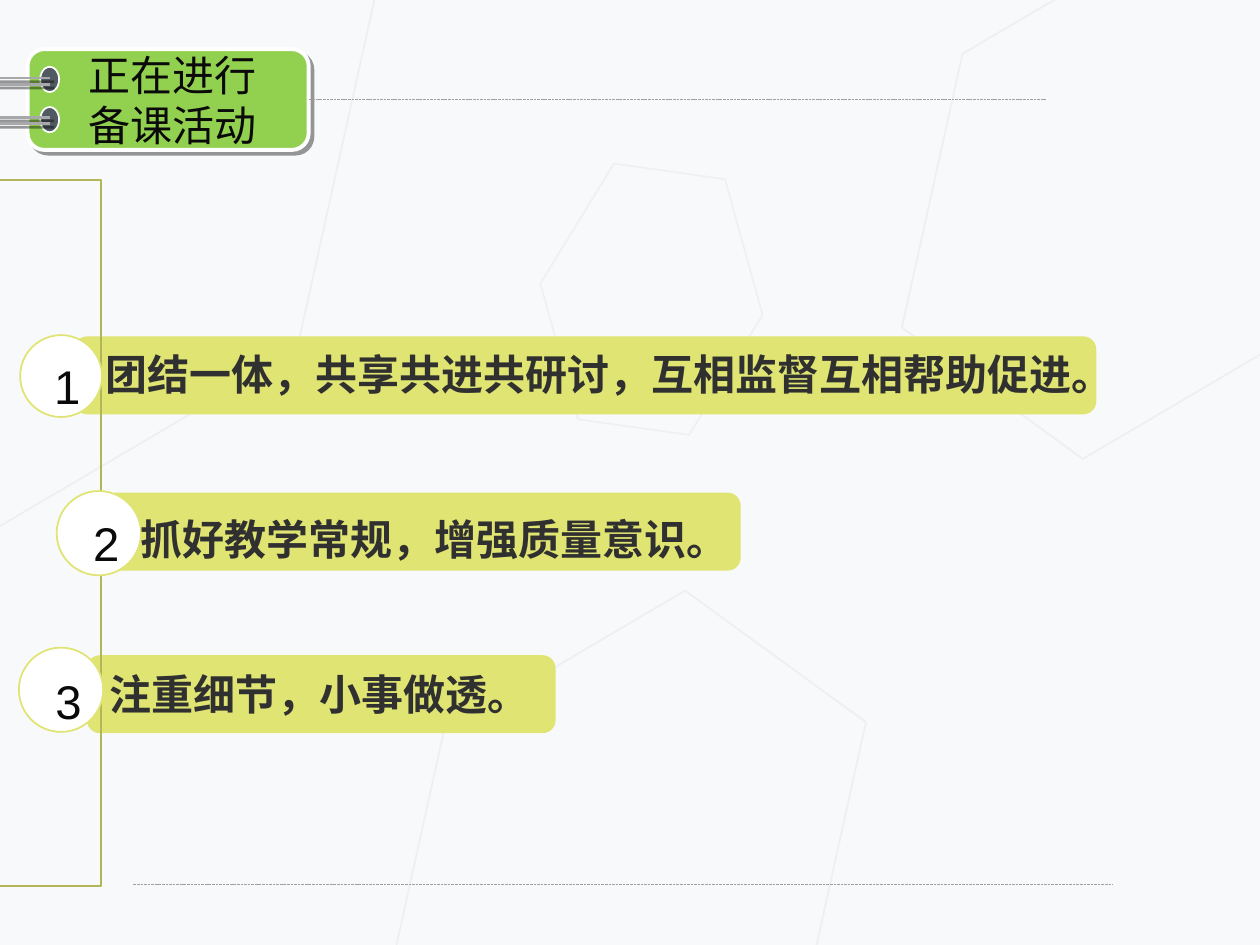
from dataclasses import dataclass
from typing import Optional

from lxml.etree import SubElement
from pptx import Presentation
from pptx.dml.color import RGBColor
from pptx.enum.dml import MSO_LINE
from pptx.enum.shapes import MSO_CONNECTOR, MSO_SHAPE as SHAPE
from pptx.enum.text import MSO_ANCHOR, MSO_AUTO_SIZE, PP_ALIGN
from pptx.oxml.ns import qn
from pptx.util import Pt


@dataclass(frozen=True)
class Theme:
    background: str = "F8F9FB"
    outline: str = "D9D9D9"
    rule: str = "9F9F9F"
    tag: str = "92D050"
    hole: str = "515A61"
    wire: str = "A8A7AA"
    bar: str = "DFE472"
    frame: str = "B2B659"
    white: str = "FFFFFF"
    ink: str = "0A0A0A"
    body: str = "303030"
    cjk: str = "Noto Sans CJK SC"
    latin: str = "Arial"
    text_size: float = 24
    number_size: float = 27


@dataclass(frozen=True)
class Box:
    left: float
    top: float
    width: float
    height: float

    def emu(self) -> list:
        return [Pt(v) for v in (self.left, self.top, self.width, self.height)]


@dataclass(frozen=True)
class Hexagon:
    box: Box
    rotation: float
    alpha: int


@dataclass(frozen=True)
class Point:
    text: str
    bar: Box
    circle: Box
    number: Box
    label: Box
    spacing: float = 1


T = Theme()

HEXAGONS = [
    Hexagon(Box(-182.9, -137.5, 389.5, 447.8), 36, 29),
    Hexagon(Box(229, 347, 255.6, 293.8), 36, 29),
    Hexagon(Box(525.6, -41, 255.6, 293.8), 36, 29),
    Hexagon(Box(308.2, 97.2, 128.2, 147.6), 8, 26),
]

POINTS = [
    Point("团结一体，共享共进共研讨，互相监督互相帮助促进。",
          Box(42.5, 192.2, 584, 44.6), Box(11.5, 191.5, 46.8, 46.8),
          Box(23.8, 190.8, 29.5, 49.7), Box(53.3, 195.8, 608.4, 36)),
    Point("抓好教学常规，增强质量意识。",
          Box(59, 281.5, 364.3, 44.6), Box(32.4, 280.6, 48.2, 48.2),
          Box(46.1, 280.8, 29.5, 49.7), Box(73.4, 293, 352, 33), 0.9),
    Point("注重细节，小事做透。",
          Box(49.7, 374.4, 267.8, 44.6), Box(10.8, 370.1, 48.2, 48.2),
          Box(24.5, 370.8, 29.5, 49.7), Box(55.4, 378.7, 255.6, 36)),
]


def rgb(color: str) -> RGBColor:
    return RGBColor.from_string(color)


def set_alpha(parent, percent: int) -> None:
    for color in parent.iter(qn("a:srgbClr")):
        SubElement(color, qn("a:alpha"), val=str(percent * 1000))


def set_shadow(sp, visible: bool) -> None:
    """Give a shape or connector its own effect list, empty or with a hard shadow."""
    effects = SubElement(sp._element.spPr, qn("a:effectLst"))
    if visible:
        shadow = SubElement(effects, qn("a:outerShdw"), blurRad="0", dist=str(Pt(3)),
                            dir="2700000", algn="tl", rotWithShape="0")
        SubElement(shadow, qn("a:srgbClr"), val="000000")
        set_alpha(shadow, 40)


def add_shape(s, kind: SHAPE, box: Box, fill: Optional[str] = None,
              line: Optional[str] = None, weight: float = 1, shadow: bool = False):
    sp = s.shapes.add_shape(kind, *box.emu())
    if fill:
        sp.fill.solid()
        sp.fill.fore_color.rgb = rgb(fill)
    else:
        sp.fill.background()
    if line:
        sp.line.color.rgb = rgb(line)
        sp.line.width = Pt(weight)
    else:
        sp.line.fill.background()
    set_shadow(sp, shadow)
    return sp


def add_line(s, x1: float, x2: float, y: float, color: str, weight: float,
             dash: Optional[MSO_LINE] = None, shadow: bool = False):
    line = s.shapes.add_connector(MSO_CONNECTOR.STRAIGHT, Pt(x1), Pt(y), Pt(x2), Pt(y))
    line.line.color.rgb = rgb(color)
    line.line.width = Pt(weight)
    if dash:
        line.line.dash_style = dash
    set_shadow(line, shadow)
    return line


def write(sp, text: str, font: str, size: float, color: str, bold: bool = False,
          spacing: float = 1, wrap: bool = True) -> None:
    tf = sp.text_frame
    tf.text = text
    tf.word_wrap = wrap
    tf.auto_size = MSO_AUTO_SIZE.NONE
    tf.vertical_anchor = MSO_ANCHOR.TOP
    for p in tf.paragraphs:
        p.alignment = PP_ALIGN.LEFT
        p.line_spacing = spacing
        for r in p.runs:
            r.font.name, r.font.size, r.font.bold = font, Pt(size), bold
            r.font.color.rgb = rgb(color)
            SubElement(r.font._element, qn("a:ea"), typeface=font)


def add_background(s) -> None:
    s.background.fill.solid()
    s.background.fill.fore_color.rgb = rgb(T.background)
    for h in HEXAGONS:
        sp = add_shape(s, SHAPE.HEXAGON, h.box, line=T.outline)
        sp.rotation = h.rotation
        set_alpha(sp.line._ln, h.alpha)


def add_tag(s) -> None:
    """Draw the bound title tag with the rules, and put the title on it."""
    tag = add_shape(s, SHAPE.ROUNDED_RECTANGLE, Box(15.8, 28.1, 160.6, 57.6),
                    T.tag, T.white, 2.25, shadow=True)
    rule = add_line(s, 176.4, 597.6, 56.9, T.rule, 0.5, MSO_LINE.SQUARE_DOT)
    rule.begin_connect(tag, 3)
    add_line(s, 76.3, 635.8, 505.4, T.rule, 0.5, MSO_LINE.SQUARE_DOT)
    for top in (38.2, 61.2):
        add_shape(s, SHAPE.OVAL, Box(23, top, 10.8, 14.4), T.hole, T.white)
    for y in (44.6, 67, 48.2, 70.6):
        add_line(s, -5, 28.8, y, T.wire, 1.5, shadow=True)

    title = s.shapes.title
    title.left, title.top, title.width, title.height = Box(43.2, 24.5, 157.7, 65.5).emu()
    write(title, "正在进行\n备课活动", T.cjk, T.text_size, T.ink)
    s.shapes._spTree.append(title._element)


def add_points(s) -> None:
    for point in reversed(POINTS):
        add_shape(s, SHAPE.ROUNDED_RECTANGLE, point.bar, T.bar)
    add_shape(s, SHAPE.RECTANGLE, Box(-345.6, 103, 403.2, 403.2), line=T.frame)
    for number, point in enumerate(POINTS, 1):
        add_shape(s, SHAPE.OVAL, point.circle, T.white, T.bar)
        write(s.shapes.add_textbox(*point.number.emu()), str(number), T.latin,
              T.number_size, T.ink, spacing=1.3, wrap=False)
        write(s.shapes.add_textbox(*point.label.emu()), point.text, T.cjk,
              T.text_size, T.body, bold=True, spacing=point.spacing)


def main() -> None:
    prs = Presentation()
    prs.slide_width, prs.slide_height = Pt(720), Pt(540)
    s = prs.slides.add_slide(prs.slide_layouts[5])
    add_background(s)
    add_tag(s)
    add_points(s)
    prs.save("out.pptx")


if __name__ == "__main__":
    main()
